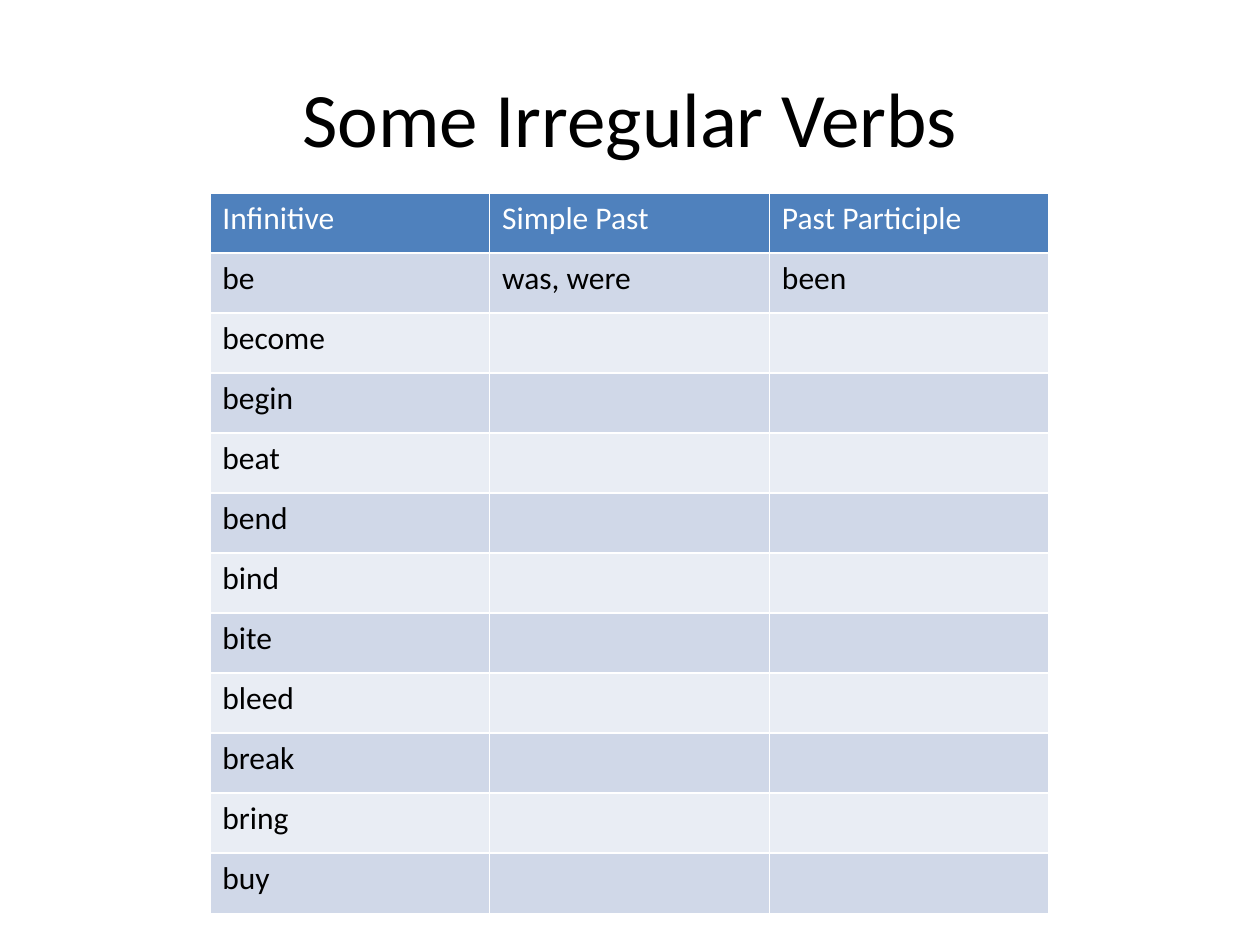
from dataclasses import dataclass

from pptx import Presentation
from pptx.dml.color import RGBColor
from pptx.enum.text import MSO_ANCHOR, PP_ALIGN
from pptx.util import Cm, Pt

CENTER = PP_ALIGN.CENTER
MIDDLE = MSO_ANCHOR.MIDDLE

HEADINGS = ("Infinitive", "Simple Past", "Past Participle")
VERBS = (
    ("be", "was, were", "been"),
    ("become",), ("begin",), ("beat",), ("bend",), ("bind",),
    ("bite",), ("bleed",), ("break",), ("bring",), ("buy",),
)


@dataclass(frozen=True)
class Theme:
    font: str = "Calibri"
    title_size: int = 44
    table_size: int = 18
    text: str = "000000"
    heading_text: str = "FFFFFF"
    heading_fill: str = "4F81BD"
    bands: tuple = ("D0D8E8", "E9EDF4")


class SlideBuilder:
    def __init__(self, slide, theme):
        self.slide = slide
        self.theme = theme

    def style(self, paragraph, size, color):
        font = paragraph.font
        font.name = self.theme.font
        font.size = Pt(size)
        font.bold = False
        font.color.rgb = RGBColor.from_string(color)

    def title(self, wording, left, top, width, height):
        frame = self.slide.shapes.add_textbox(left, top, width, height).text_frame
        frame.word_wrap = True
        frame.vertical_anchor = MIDDLE
        heading = frame.paragraphs[0]
        heading.text = wording
        heading.alignment = CENTER
        self.style(heading, self.theme.title_size, self.theme.text)

    def table(self, headings, entries, left, top, column_width, row_height):
        """Add a banded table; its white rules come from the default table style."""
        row_count, column_count = len(entries) + 1, len(headings)
        table = self.slide.shapes.add_table(
            row_count, column_count, left, top,
            column_width * column_count, row_height * row_count,
        ).table
        for column in table.columns:
            column.width = column_width
        for row in table.rows:
            row.height = row_height
        self.fill_row(table.rows[0], headings, self.theme.heading_fill,
                      self.theme.heading_text)
        for index, entry in enumerate(entries):
            band = self.theme.bands[index % len(self.theme.bands)]
            self.fill_row(table.rows[index + 1], entry, band, self.theme.text)

    def fill_row(self, row, words, fill, color):
        """Colour a whole row and write the words from the left, leaving the rest empty."""
        for cell in row.cells:
            cell.fill.solid()
            cell.fill.fore_color.rgb = RGBColor.from_string(fill)
            self.style(cell.text_frame.paragraphs[0], self.theme.table_size, color)
        for cell, word in zip(row.cells, words):
            cell.text_frame.paragraphs[0].text = word


def main():
    deck = Presentation()
    deck.slide_width, deck.slide_height = Cm(25.4), Cm(19.05)
    slide = deck.slides.add_slide(deck.slide_layouts[6])
    builder = SlideBuilder(slide, Theme())
    builder.title("Some Irregular Verbs", Cm(1.27), Cm(0.76), Cm(22.86), Cm(3.18))
    builder.table(HEADINGS, VERBS, Cm(4.23), Cm(3.89), Cm(5.64), Cm(1.21))
    deck.save("out.pptx")


if __name__ == "__main__":
    main()
